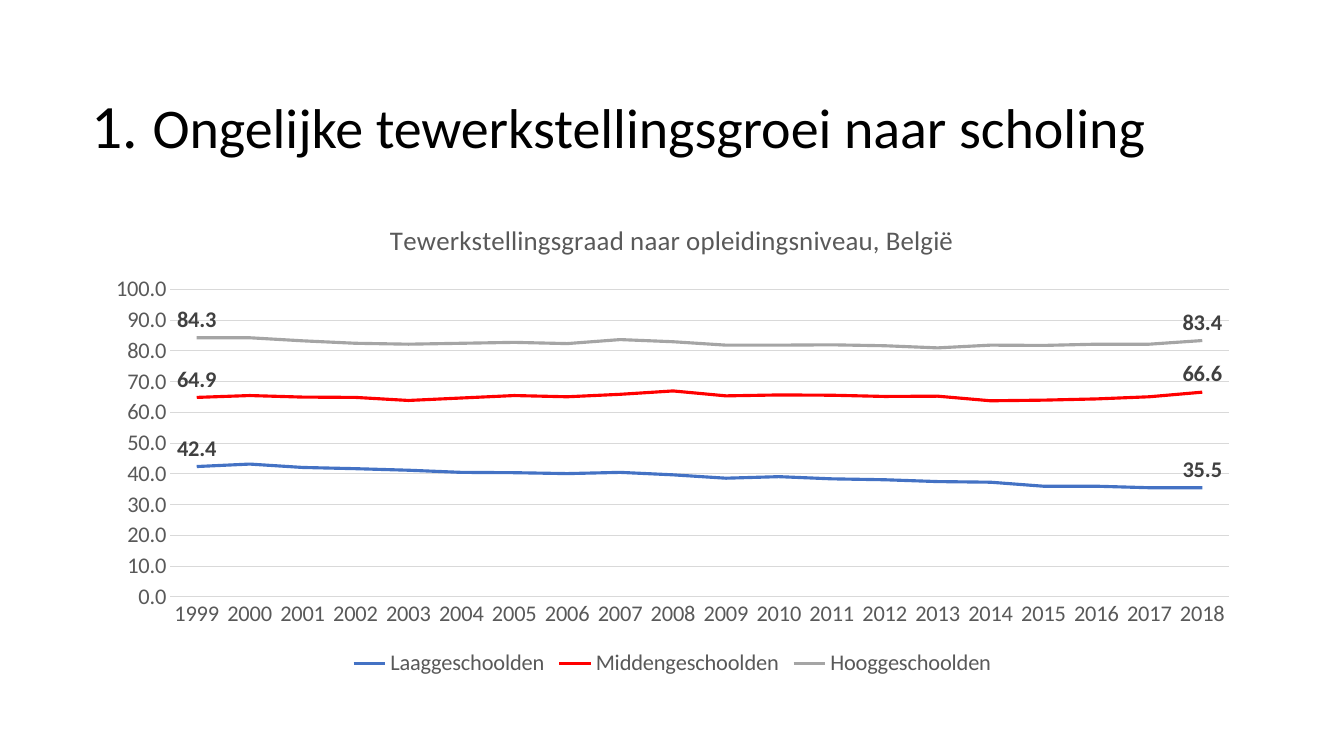
"""Build a slide with a line chart of Belgian employment rates by education level."""
from dataclasses import dataclass

import pptx
import pptx.chart.data
import pptx.dml.color
import pptx.enum.chart
import pptx.enum.text
import pptx.util

Cm = pptx.util.Cm
Pt = pptx.util.Pt


@dataclass(frozen=True)
class Theme:
    font: str = "Calibri"
    title: str = "000000"
    text: str = "595959"
    label: str = "404040"
    grid: str = "D9D9D9"
    number_size: float = 44
    title_size: float = 40
    chart_title_size: float = 19.2
    chart_size: float = 16
    grid_width: float = 0.75
    series_width: float = 2.25


THEME = Theme()
NUMBER_FORMAT = "#,##0.0"
YEARS = range(1999, 2019)
RATES = {
    "Laaggeschoolden": ("4472C4", (
        42.4, 43.2, 42.1, 41.7, 41.2, 40.5, 40.4, 40.1, 40.5, 39.7,
        38.6, 39.1, 38.4, 38.1, 37.5, 37.3, 36, 36, 35.5, 35.5)),
    "Middengeschoolden": ("FF0000", (
        64.9, 65.5, 65, 64.9, 63.9, 64.7, 65.5, 65.1, 65.9, 67,
        65.4, 65.7, 65.6, 65.2, 65.3, 63.8, 64, 64.4, 65.1, 66.6)),
    "Hooggeschoolden": ("A5A5A5", (
        84.3, 84.3, 83.3, 82.5, 82.2, 82.5, 82.8, 82.4, 83.7, 83,
        81.9, 81.9, 82, 81.7, 81, 81.9, 81.8, 82.2, 82.2, 83.4)),
}


def apply(target, values):
    for name, value in values.items():
        setattr(target, name, value)


def format_font(font, size, color, bold=False):
    apply(font, {"name": THEME.font, "size": Pt(size), "bold": bold})
    font.color.rgb = pptx.dml.color.RGBColor.from_string(color)


def format_line(line, color, width):
    line.color.rgb = pptx.dml.color.RGBColor.from_string(color)
    line.width = Pt(width)


def add_title(page, spans):
    box = page.shapes.title
    apply(box, {"left": Cm(2.06), "top": Cm(1.4), "width": Cm(29.21), "height": Cm(3.68)})
    apply(box.text_frame, {
        "word_wrap": True,
        "auto_size": pptx.enum.text.MSO_AUTO_SIZE.NONE,
        "vertical_anchor": pptx.enum.text.MSO_ANCHOR.MIDDLE,
    })
    para = box.text_frame.paragraphs[0]
    apply(para, {"alignment": pptx.enum.text.PP_ALIGN.LEFT, "line_spacing": 0.9})
    for text, size in spans:
        span = para.add_run()
        span.text = text
        format_font(span.font, size, THEME.title)


def format_axes(chart):
    none = pptx.enum.chart.XL_TICK_MARK.NONE
    for axis in (chart.category_axis, chart.value_axis):
        apply(axis, {"major_tick_mark": none, "minor_tick_mark": none})
        format_font(axis.tick_labels.font, THEME.chart_size, THEME.text)
    format_line(chart.category_axis.format.line, THEME.grid, THEME.grid_width)
    values = chart.value_axis
    apply(values, {"minimum_scale": 0, "maximum_scale": 100, "has_major_gridlines": True})
    apply(values.tick_labels, {"number_format": NUMBER_FORMAT, "number_format_is_linked": False})
    values.format.line.fill.background()
    format_line(values.major_gridlines.format.line, THEME.grid, THEME.grid_width)


def format_series(series, color):
    series.smooth = False
    format_line(series.format.line, color, THEME.series_width)
    apply(series.data_labels, {
        "show_value": False,
        "number_format": NUMBER_FORMAT,
        "number_format_is_linked": False,
    })
    for index in (0, len(YEARS) - 1):
        label = series.points[index].data_label
        format_font(label.font, THEME.chart_size, THEME.label, bold=True)
        label.position = pptx.enum.chart.XL_LABEL_POSITION.ABOVE


def add_line_chart(page, title):
    data = pptx.chart.data.CategoryChartData(number_format=NUMBER_FORMAT)
    data.categories = [str(year) for year in YEARS]
    for name, (_, rates) in RATES.items():
        data.add_series(name, rates)
    chart = page.shapes.add_chart(
        pptx.enum.chart.XL_CHART_TYPE.LINE,
        Cm(2.34), Cm(5.08), Cm(29.21), Cm(12.09), data).chart
    format_font(chart.font, THEME.chart_size, THEME.text)
    apply(chart, {"has_title": True, "has_legend": True})
    para = chart.chart_title.text_frame.paragraphs[0]
    span = para.add_run()
    span.text = title
    format_font(span.font, THEME.chart_title_size, THEME.text)
    chart.chart_title.include_in_layout = False
    apply(chart.legend, {
        "position": pptx.enum.chart.XL_LEGEND_POSITION.BOTTOM,
        "include_in_layout": False,
    })
    format_font(chart.legend.font, THEME.chart_size, THEME.text)
    format_axes(chart)
    plot = chart.plots[0]
    plot.vary_by_categories = False
    for series in plot.series:
        format_series(series, RATES[series.name][0])


def main():
    deck = pptx.Presentation()
    apply(deck, {"slide_width": Cm(33.87), "slide_height": Cm(19.05)})
    page = deck.slides.add_slide(deck.slide_layouts.get_by_name("Title Only"))
    add_title(page, (
        ("1. ", THEME.number_size),
        ("Ongelijke tewerkstellingsgroei naar scholing", THEME.title_size),
    ))
    add_line_chart(page, "Tewerkstellingsgraad naar opleidingsniveau, België")
    deck.save("out.pptx")


if __name__ == "__main__":
    main()
